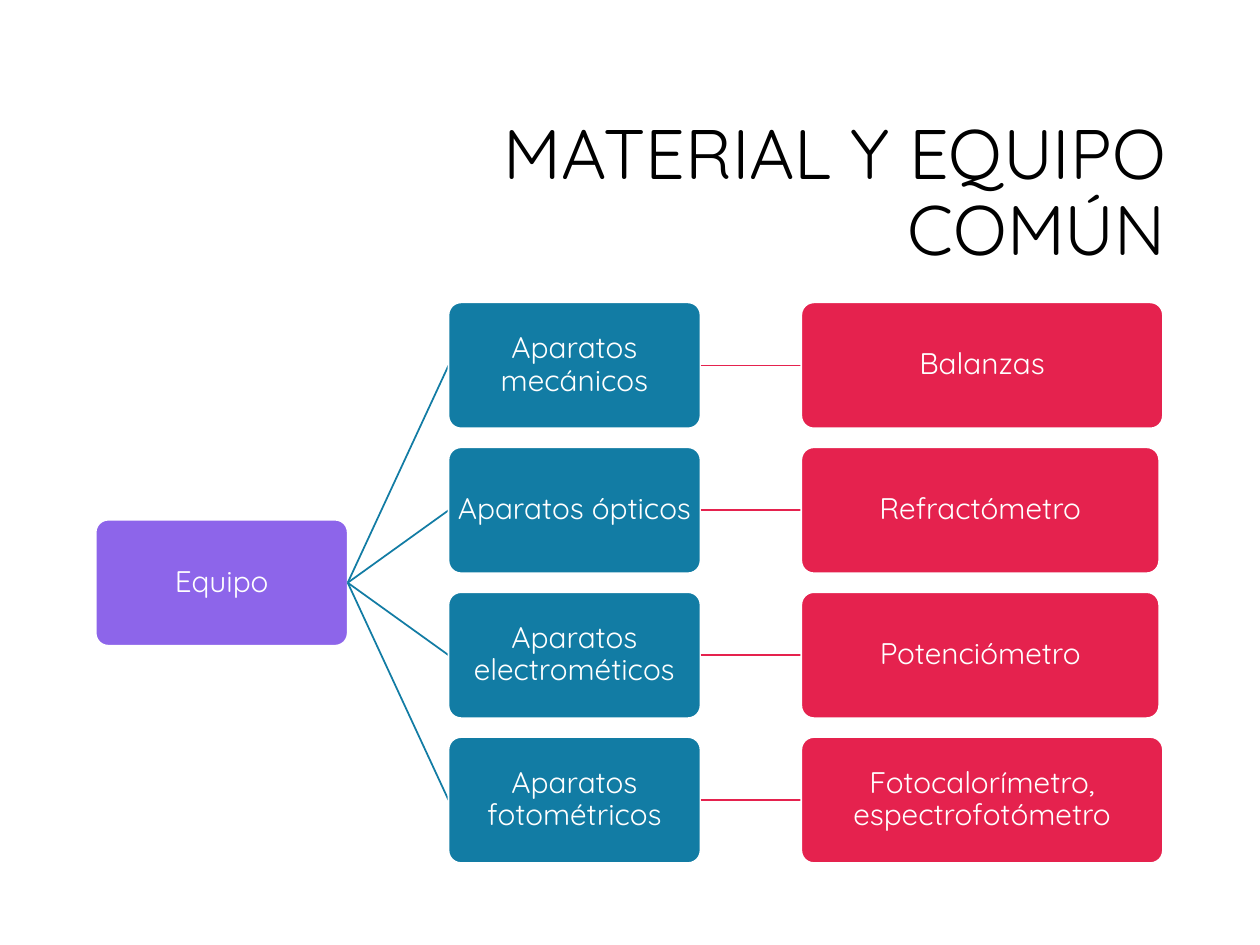
import pptx
import pptx.dml.color
import pptx.enum.shapes
import pptx.enum.text
import pptx.oxml.ns
import pptx.util
from lxml import etree

Inches = pptx.util.Inches
Pt = pptx.util.Pt
ALIGN = pptx.enum.text.PP_ALIGN

COLORS = {
    "title": "000000",
    "white": "FFFFFF",
    "root": "8D65EA",
    "group": "127CA4",
    "device": "E5224E",
}


class TreeSlide:
    """Hold the style and the current slide, and draw its elements."""

    font = "Quicksand"
    box_height = 1
    line_width = Pt(1)

    def __init__(self, slide):
        self.slide = slide

    def color(self, key):
        return pptx.dml.color.RGBColor.from_string(COLORS[key])

    def set_text(self, frame, text, size, color, align):
        frame.word_wrap = True
        frame.vertical_anchor = pptx.enum.text.MSO_ANCHOR.MIDDLE
        frame.text = text
        paragraph = frame.paragraphs[0]
        paragraph.alignment = align
        paragraph.line_spacing = 0.9
        font = paragraph.runs[0].font
        font.name = self.font
        font.size = Pt(size)
        font.color.rgb = self.color(color)

    def title(self, text, left, top, width, height):
        heading = self.slide.shapes.add_textbox(
            Inches(left), Inches(top), Inches(width), Inches(height))
        self.set_text(heading.text_frame, text, 40, "title", ALIGN.RIGHT)

    def box(self, text, left, middle, width, color):
        node = self.slide.shapes.add_shape(
            pptx.enum.shapes.MSO_SHAPE.ROUNDED_RECTANGLE,
            Inches(left), Inches(middle - self.box_height / 2),
            Inches(width), Inches(self.box_height))
        node.adjustments[0] = 0.1
        node.shadow.inherit = False
        node.fill.solid()
        node.fill.fore_color.rgb = self.color(color)
        node.line.color.rgb = self.color("white")
        node.line.width = self.line_width
        frame = node.text_frame
        frame.margin_left = frame.margin_right = Inches(0.01)
        frame.margin_top = frame.margin_bottom = Inches(0.01)
        self.set_text(frame, text, 17, "white", ALIGN.CENTER)

    def branch(self, start_x, start_y, end_x, end_y, color):
        link = self.slide.shapes.add_connector(
            pptx.enum.shapes.MSO_CONNECTOR.STRAIGHT,
            Inches(start_x), Inches(start_y), Inches(end_x), Inches(end_y))
        link.line.color.rgb = self.color(color)
        link.line.width = self.line_width
        etree.SubElement(link.element.spPr, pptx.oxml.ns.qn("a:effectLst"))


def main():
    presentation = pptx.Presentation()
    presentation.slide_width = Inches(10)
    presentation.slide_height = Inches(7.5)
    tree = TreeSlide(presentation.slides.add_slide(presentation.slide_layouts[6]))

    tree.title("MATERIAL Y EQUIPO COMÚN", 2.38, 0.84, 6.97, 1.41)

    equipment = [
        ("Aparatos mecánicos", "Balanzas", 2.87),
        ("Aparatos ópticos", "Refractómetro", 2.84),
        ("Aparatos electrométicos", "Potenciómetro", 2.84),
        ("Aparatos fotométricos", "Fotocalorímetro, espectrofotómetro", 2.87),
    ]
    node_width, gap = 2, 0.8
    root_left = 0.76
    group_left = root_left + node_width + gap
    device_left = group_left + node_width + gap
    first_middle, pitch = 2.9, 1.15
    root_middle = first_middle + pitch * (len(equipment) - 1) / 2

    tree.box("Equipo", root_left, root_middle, node_width, "root")
    for row, (group, device, device_width) in enumerate(equipment):
        middle = first_middle + row * pitch
        tree.branch(group_left - gap, root_middle, group_left, middle, "group")
        tree.box(group, group_left, middle, node_width, "group")
        tree.branch(device_left - gap, middle, device_left, middle, "device")
        tree.box(device, device_left, middle, device_width, "device")

    presentation.save("out.pptx")


if __name__ == "__main__":
    main()
